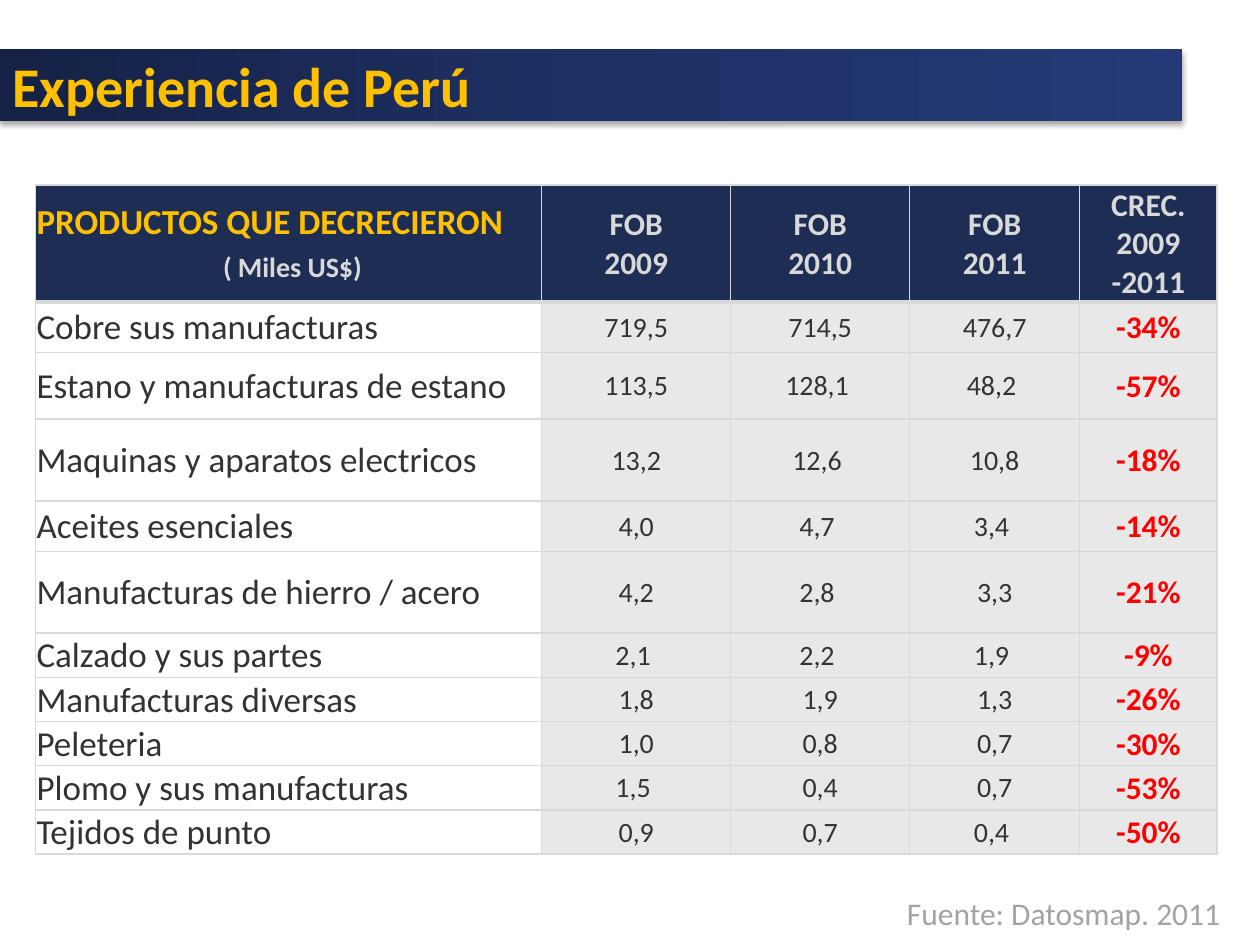
from lxml import etree
from pptx import Presentation
from pptx import util as u
from pptx.dml.color import RGBColor
from pptx.enum import shapes, text
from pptx.oxml import ns

COLORS = {
    "navy": "1E2D54", "gold": "FFC000", "rule": "D9D9D9", "ink": "333333",
    "red": "FF0000", "white": "FFFFFF", "cell": "E8E8E9", "source": "A3A3A3",
    "bar_left": "152246", "bar_mid": "1E3064", "bar_right": "243976",
    "shadow": "000000",
}
LEFT, CENTER = text.PP_ALIGN.LEFT, text.PP_ALIGN.CENTER


def add_text(p, words, size=18, color="ink", bold=False, align=LEFT):
    p.alignment = align
    r = p.add_run()
    r.text = words
    r.font.name = "Calibri"
    r.font.size = u.Pt(size)
    r.font.bold = bold
    r.font.color.rgb = RGBColor.from_string(COLORS[color])


def add_xml(parent, tag, **attrs):
    el = etree.SubElement(parent, ns.qn(tag))
    for name, value in attrs.items():
        el.set(name, str(value))
    return el


prs = Presentation()
prs.slide_width, prs.slide_height = u.Inches(10), u.Inches(7.5)
s = prs.slides.add_slide(prs.slide_layouts[6])

# Table contents
headers = ["FOB\n2009", "FOB\n2010", "FOB\n2011", "CREC. 2009 -2011"]
products = [
    ("Cobre sus manufacturas", "719,5", "714,5", "476,7", "-34%"),
    ("Estano y manufacturas de estano", "113,5", "128,1 ", "48,2 ", "-57%"),
    ("Maquinas y aparatos electricos", "13,2", "12,6 ", "10,8", "-18%"),
    ("Aceites esenciales", "4,0", "4,7 ", "3,4 ", "-14%"),
    ("Manufacturas de hierro / acero", "4,2", "2,8 ", "3,3", "-21%"),
    ("Calzado y sus partes", "2,1 ", "2,2 ", "1,9 ", "-9%"),
    ("Manufacturas diversas", "1,8", "1,9", "1,3", "-26%"),
    ("Peleteria", "1,0", "0,8", "0,7", "-30%"),
    ("Plomo y sus manufacturas", "1,5 ", "0,4", "0,7", "-53%"),
    ("Tejidos de punto", "0,9", "0,7", "0,4 ", "-50%"),
]
col_widths = [4.02, 1.5, 1.42, 1.35, 1.09]
row_heights = [0.4, 0.4, 0.53, 0.65, 0.4, 0.65] + [0.35] * 5

# Table grid
frame = s.shapes.add_table(len(row_heights), len(col_widths), u.Inches(0.28),
                           u.Inches(1.47), u.Inches(9.37), u.Inches(5.32))
table = frame.table
table.horz_banding = False
for col, width in zip(table.columns, col_widths):
    col.width = u.Inches(width)
for row, height in zip(table.rows, row_heights):
    row.height = u.Inches(height)

# Cell margins, borders and fills
for i, row in enumerate(table.rows):
    for j, cell in enumerate(row.cells):
        cell.vertical_anchor = text.MSO_ANCHOR.MIDDLE
        cell.margin_left = cell.margin_right = cell.margin_top = u.Inches(0.01)
        cell.margin_bottom = 0
        tcPr = cell._tc.get_or_add_tcPr()
        for side in "LRTB":
            thick = (i, side) in ((0, "B"), (1, "T"))
            ln = add_xml(tcPr, f"a:ln{side}", w=u.Pt(3 if thick else 1))
            add_xml(add_xml(ln, "a:solidFill"), "a:srgbClr", val=COLORS["rule"])
        fill = "navy" if i == 0 else "white" if j == 0 else "cell"
        cell.fill.solid()
        cell.fill.fore_color.rgb = RGBColor.from_string(COLORS[fill])

# Header row
tf = table.cell(0, 0).text_frame
add_text(tf.paragraphs[0], "PRODUCTOS QUE DECRECIERON", size=20, color="gold", bold=True)
p = tf.add_paragraph()
add_text(p, " ", size=20, color="gold", bold=True, align=CENTER)
add_text(p, "( Miles US$)", size=16, color="rule", bold=True, align=CENTER)
for j, header in enumerate(headers, 1):
    tf = table.cell(0, j).text_frame
    for k, line in enumerate(header.split("\n")):
        p = tf.add_paragraph() if k else tf.paragraphs[0]
        add_text(p, line, color="rule", bold=True, align=CENTER)

# Product rows
name_format = dict(size=20)
value_format = dict(size=16, align=CENTER)
growth_format = dict(size=18, color="red", bold=True, align=CENTER)
formats = [name_format] + [value_format] * 3 + [growth_format]
for i, product in enumerate(products, 1):
    for j, (words, fmt) in enumerate(zip(product, formats)):
        add_text(table.cell(i, j).text_frame.paragraphs[0], words, **fmt)

# Title bar with gradient and shadow
sp = s.shapes.add_shape(shapes.MSO_SHAPE.RECTANGLE, 0, u.Inches(0.39),
                        u.Inches(9.38), u.Inches(0.57))
sp.line.fill.background()
sp.fill.gradient()
sp.fill.gradient_angle = 0
stops = sp._element.spPr.find(ns.qn("a:gradFill")).find(ns.qn("a:gsLst"))
for stop in list(stops):
    stops.remove(stop)
for pos, name in ((0, "bar_left"), (50, "bar_mid"), (100, "bar_right")):
    add_xml(add_xml(stops, "a:gs", pos=pos * 1000), "a:srgbClr", val=COLORS[name])
sp.shadow.inherit = False
effects = sp._element.spPr.find(ns.qn("a:effectLst"))
shadow = add_xml(effects, "a:outerShdw", blurRad=u.Pt(3), dist=u.Pt(2),
                 dir=90 * 60000, rotWithShape=0)
add_xml(add_xml(shadow, "a:srgbClr", val=COLORS["shadow"]), "a:alpha", val=35000)
tf = sp.text_frame
tf.vertical_anchor = text.MSO_ANCHOR.MIDDLE
add_text(tf.paragraphs[0], "Experiencia de Perú", size=32, color="gold", bold=True)

# Source note
tf = s.shapes.add_textbox(u.Inches(7.1), u.Inches(7.05),
                          u.Inches(2.7), u.Inches(0.4)).text_frame
tf.word_wrap = False
tf.auto_size = text.MSO_AUTO_SIZE.SHAPE_TO_FIT_TEXT
add_text(tf.paragraphs[0], "Fuente: Datosmap. 2011", color="source")

prs.save("out.pptx")
